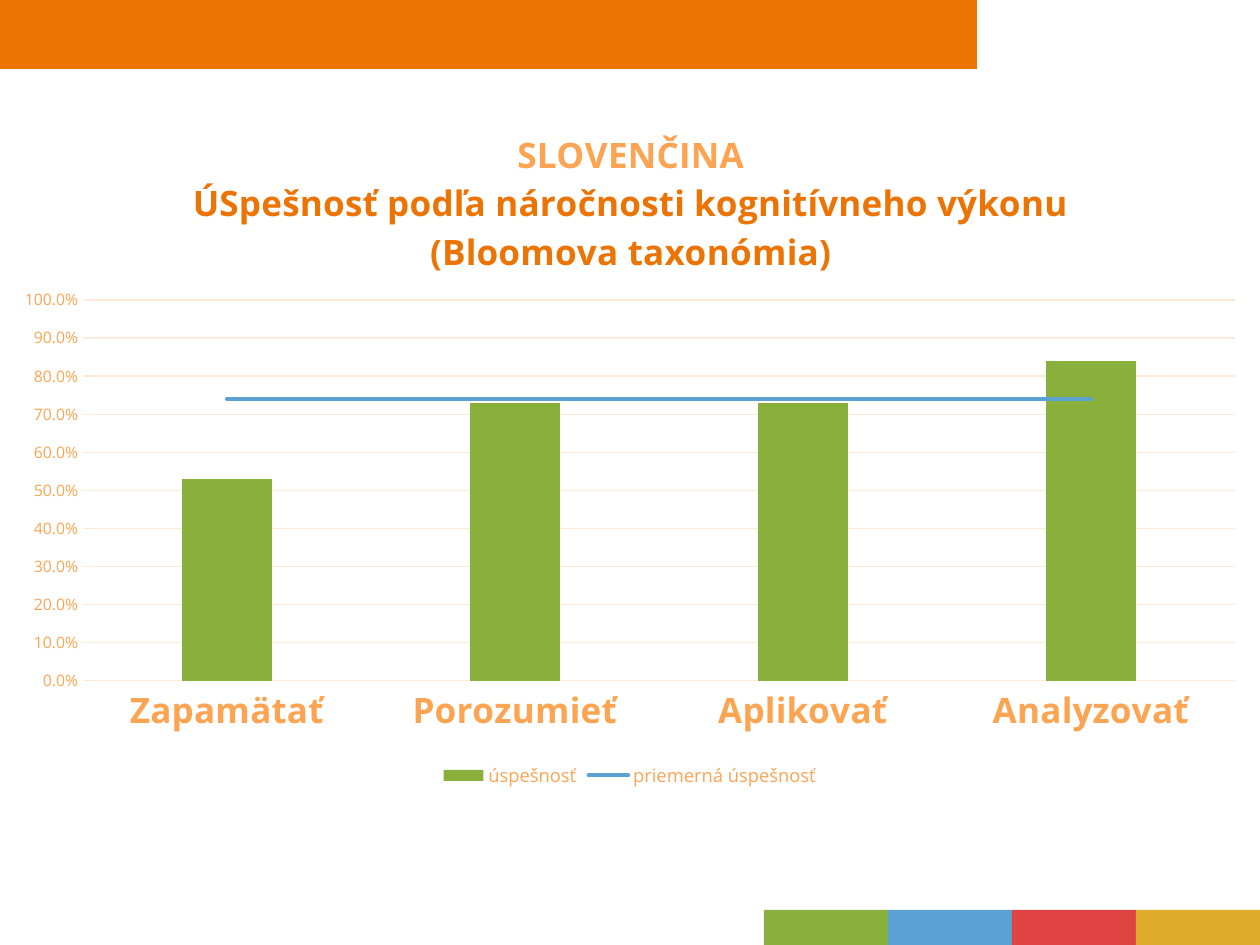
import pptx
import pptx.chart.data
import pptx.dml.color
import pptx.enum.chart
import pptx.enum.shapes
import pptx.oxml
import pptx.oxml.ns
import pptx.util

PX = 914400 / 126
FONT = "Open Sans"
COLORS = {
    "orange": "EC7404", "light": "FCA452", "grid": "FEEAD7",
    "green": "89B03C", "blue": "5BA1D4", "red": "DF4443", "yellow": "DEAA2A",
}
CATEGORIES = ["Zapamätať", "Porozumieť", "Aplikovať", "Analyzovať"]
SUCCESS = [0.53, 0.73, 0.73, 0.84]
AVERAGE = 0.74
TITLE = [("SLOVENČINA", "light"),
         ("ÚSpešnosť podľa náročnosti kognitívneho výkonu (Bloomova taxonómia)", "orange")]


def px(n):
    """Turn px into EMU."""
    return pptx.util.Emu(round(n * PX))


def rgb(name):
    """Look up a palette colour."""
    return pptx.dml.color.RGBColor.from_string(COLORS[name])


def style_font(font, size, color, bold=False):
    """Set face, size, colour and weight of a font."""
    font.name = FONT
    font.size = pptx.util.Pt(size)
    font.bold = bold
    font.color.rgb = rgb(color)


def style_line(line, color, width):
    """Set colour and width of a line."""
    line.color.rgb = rgb(color)
    line.width = pptx.util.Pt(width)


def c_element(tag, content=""):
    """Make a chart element from its tag and inner XML."""
    ns = pptx.oxml.ns.nsdecls("c")
    return pptx.oxml.parse_xml(f"<c:{tag} {ns}>{content}</c:{tag}>")


def drop_children(parent, tag):
    """Remove every child with the given tag."""
    for child in parent.findall(pptx.oxml.ns.qn(tag)):
        parent.remove(child)


def set_layout(parent, index, **fractions):
    """Give a chart part a manual layout in fractions of the chart."""
    drop_children(parent, "c:layout")
    target = '<c:layoutTarget val="inner"/>' if "w" in fractions else ""
    modes = '<c:xMode val="edge"/><c:yMode val="edge"/>'
    values = "".join(f'<c:{k} val="{v}"/>' for k, v in fractions.items())
    parent.insert(index, c_element(
        "layout", f"<c:manualLayout>{target}{modes}{values}</c:manualLayout>"))


def add_block(slide, color, left, top, width, height):
    """Add a plain coloured rectangle."""
    sp = slide.shapes.add_shape(pptx.enum.shapes.MSO_SHAPE.RECTANGLE,
                                px(left), px(top), px(width), px(height))
    sp.shadow.inherit = False
    sp.fill.solid()
    sp.fill.fore_color.rgb = rgb(color)
    sp.line.fill.background()


def add_color_strip(slide, left, top, width, height):
    """Add the row of equal coloured blocks."""
    names = ["green", "blue", "red", "yellow"]
    step = width // len(names)
    for i, name in enumerate(names):
        add_block(slide, name, left + i * step, top, step, height)


def move_to_line(chart, series):
    """Move a column series into a line plot on the same axes."""
    qn = pptx.oxml.ns.qn
    bar = chart.plots[0]._element
    ser = series._element
    bar.remove(ser)
    drop_children(ser, "c:invertIfNegative")
    ser.find(qn("c:spPr")).addnext(c_element("marker", '<c:symbol val="none"/>'))
    smooth = c_element("smooth")
    smooth.set("val", "0")
    ser.append(smooth)
    axes = "".join(f'<c:axId val="{a.get("val")}"/>' for a in bar.findall(qn("c:axId")))
    line = c_element("lineChart", '<c:grouping val="standard"/><c:varyColors val="0"/>'
                     '<c:marker val="1"/>' + axes)
    line.insert(2, ser)
    bar.addnext(line)


def style_title(chart):
    """Write the two-paragraph chart title."""
    tf = chart.chart_title.text_frame
    tf.text = "\n".join(text for text, _ in TITLE)
    for p, (_, color) in zip(tf.paragraphs, TITLE):
        style_font(p.runs[0].font, 20, color, True)
    title = chart.chart_title._element
    drop_children(title, "c:overlay")
    set_layout(title, 1, x=0.15, y=0.04)
    overlay = c_element("overlay")
    overlay.set("val", "0")
    title.insert(2, overlay)


def style_axes(chart):
    """Format both axes and the gridlines."""
    cat, val = chart.category_axis, chart.value_axis
    for axis in (cat, val):
        axis.major_tick_mark = pptx.enum.chart.XL_TICK_MARK.NONE
        axis.minor_tick_mark = pptx.enum.chart.XL_TICK_MARK.NONE
    style_font(cat.tick_labels.font, 20, "light", True)
    style_line(cat.format.line, "grid", 0.75)
    style_font(val.tick_labels.font, 9, "light")
    val.tick_labels.number_format = "0.0%"
    val.tick_labels.number_format_is_linked = False
    val.minimum_scale, val.maximum_scale, val.major_unit = 0, 1, 0.1
    val.format.line.fill.background()
    style_line(val.major_gridlines.format.line, "grid", 0.75)


def add_success_chart(slide, left, top, width, height):
    """Add the columns of success with the average line."""
    data = pptx.chart.data.CategoryChartData(number_format="0.0%")
    data.categories = CATEGORIES
    data.add_series("úspešnosť", SUCCESS)
    data.add_series("priemerná úspešnosť", [AVERAGE] * len(CATEGORIES))
    chart = slide.shapes.add_chart(
        pptx.enum.chart.XL_CHART_TYPE.COLUMN_CLUSTERED,
        px(left), px(top), px(width), px(height), data).chart
    style_font(chart.font, 10, "orange")
    style_title(chart)
    style_axes(chart)

    plot = chart.plots[0]
    plot.vary_by_categories = False
    plot.gap_width, plot.overlap = 219, -27
    columns, average = plot.series
    columns.format.fill.solid()
    columns.format.fill.fore_color.rgb = rgb("green")
    style_line(average.format.line, "blue", 2.25)
    average.format.line._ln.set("cap", "rnd")
    move_to_line(chart, average)

    chart.has_legend = True
    chart.legend.position = pptx.enum.chart.XL_LEGEND_POSITION.BOTTOM
    chart.legend.include_in_layout = False
    style_font(chart.legend.font, 10.5, "light")
    plot_area = plot._element.getparent()
    set_layout(plot_area, 0, x=83 / width, y=204 / height,
               w=1152 / width, h=381 / height)


def main():
    """Build the slide and save it."""
    prs = pptx.Presentation()
    prs.slide_width, prs.slide_height = px(1260), px(945)
    s = prs.slides.add_slide(prs.slide_layouts[6])
    add_block(s, "orange", 0, 0, 977, 69)
    add_color_strip(s, 764, 910, 496, 35)
    add_success_chart(s, 0, 96, 1260, 697)
    prs.save("out.pptx")


if __name__ == "__main__":
    main()
